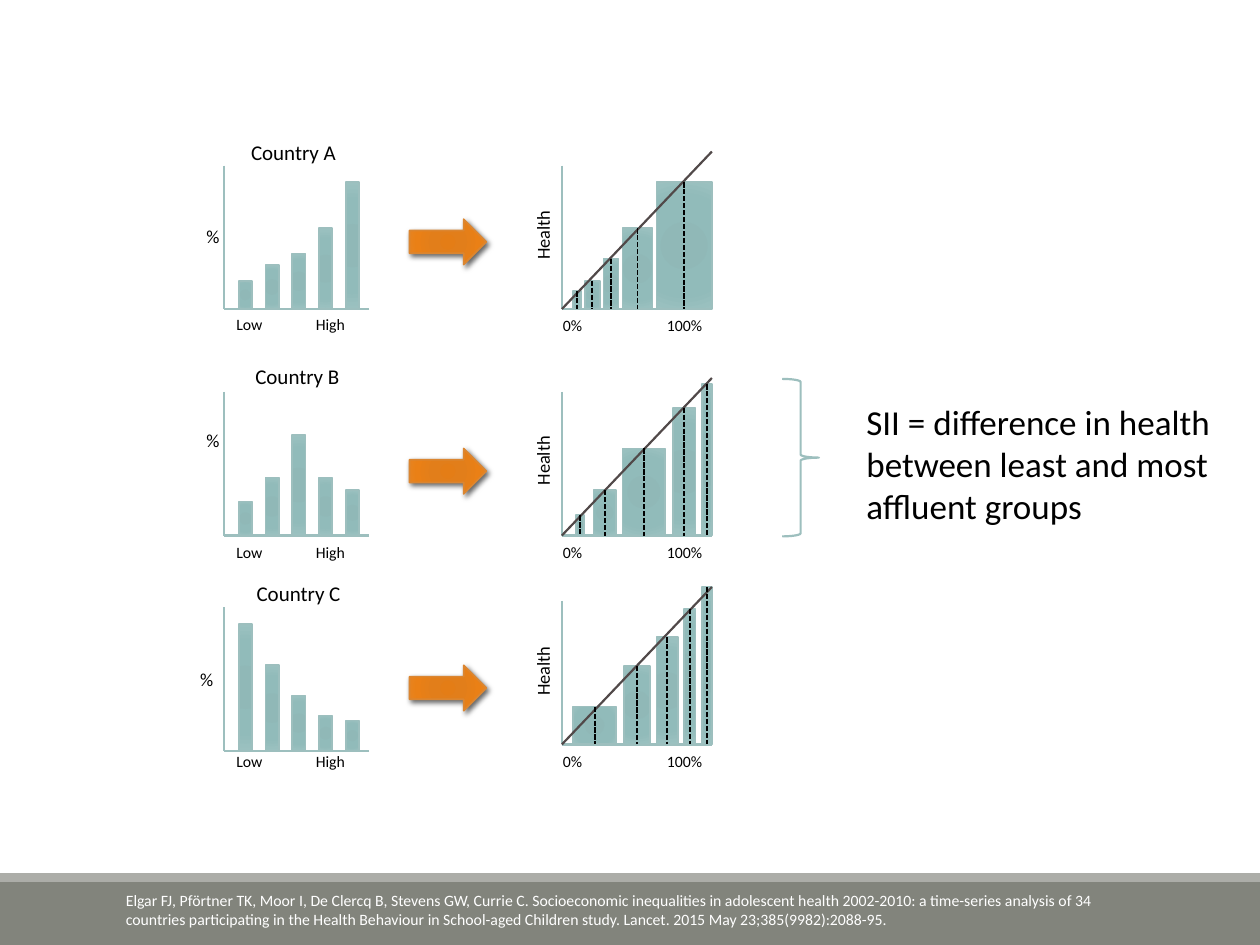
"""Build a slide on the slope index of inequality in three countries."""
from dataclasses import dataclass

from lxml import etree
from pptx import Presentation
from pptx import util as u
from pptx.dml.color import RGBColor
from pptx.enum import dml, shapes, text
from pptx.oxml import ns


@dataclass(frozen=True)
class Theme:
    """Colours, type sizes and line widths of the slide."""
    font: str = "Calibri"
    ink: str = "000000"
    paper: str = "FFFFFF"
    band: str = "82847C"
    strip: str = "ACADA8"
    teal: str = "9DBFBE"
    trend: str = "514949"
    arrow: str = "DB8631"
    bar_stops: tuple = ((0, "8EB7B6"), (34, "90B8B7"), (70, "91BBBA"), (100, "9BC1C0"))
    arrow_stops: tuple = ((0, "E47D16"), (34, "E27E1A"), (70, "EA8016"), (100, "E48628"))
    statement: float = 20
    title: float = 12
    label: float = 10.5
    small: float = 9
    thin: float = 1
    thick: float = 1.25


@dataclass(frozen=True)
class Country:
    """Positions and bars of one row; ranks hold left, width and height."""
    name: str
    title_at: tuple
    percent_at: tuple
    base: float
    shares: tuple
    rank_base: float
    ranks: tuple
    health_top: float
    low_top: float
    rank_label_top: float
    arrow_top: float


T = Theme()
COUNTRIES = (
    Country("Country A", (129.6, 76.3), (110.9, 125.3), 176.6,
            (16.2, 25.2, 31.7, 46.1, 72.4), 176.6,
            ((327.6, 4.3, 10.1), (334.1, 8.6, 16.2), (344.9, 8.6, 28.8),
             (355.7, 17.3, 46.1), (375.1, 31.7, 72.4)),
            119.5, 176.4, 177.1, 125.3),
    Country("Country B", (131.8, 204.5), (110.9, 241.9), 306,
            (19.4, 33.1, 57.6, 33.1, 25.9), 306,
            ((329, 5, 11.5), (339.1, 13, 25.9), (355.7, 24.5, 49.7),
             (384.5, 13, 73), (401, 5.8, 86.4)),
            248.4, 306.7, 306.7, 256.3),
    Country("Country C", (132.5, 328.3), (107.3, 378), 429.1,
            (72.7, 49, 31.7, 20.2, 17.3), 425.4,
            ((327.6, 24.5, 21.6), (356.4, 15.1, 45), (375.1, 12.2, 61.2),
             (391, 6.5, 77.4), (401, 5.8, 90)),
            368.6, 426.2, 426.2, 380.2),
)
AXIS_HEIGHT = 82
TREND_RISE = 90
SHARE_LEFT, SHARE_RIGHT = 128, 211
BAR_LEFT, BAR_PITCH, BAR_WIDTH = 136.4, 15.3, 7.6
RANK_LEFT, RANK_RIGHT = 321.1, 406.8


def add_element(parent, tag, **attrs):
    """Append a DrawingML element."""
    return etree.SubElement(parent, ns.qn(tag), attrs)


def add_color(parent, color):
    """Append a plain colour element."""
    return add_element(parent, "a:srgbClr", val=color)


def set_gradient(sp, stops):
    """Fill a shape with a radial gradient."""
    sp.fill.background()
    old = sp._element.spPr.find(ns.qn("a:noFill"))
    grad = etree.Element(ns.qn("a:gradFill"), rotWithShape="1")
    stop_list = add_element(grad, "a:gsLst")
    for position, color in stops:
        add_color(add_element(stop_list, "a:gs", pos=str(position * 1000)), color)
    radial = add_element(grad, "a:path", path="circle")
    add_element(radial, "a:fillToRect", **dict.fromkeys("ltrb", "100000"))
    old.getparent().replace(old, grad)


def add_figure(parent, kind, box, line=None, width=T.thin, fill=None, stops=None):
    """Add a preset shape with a solid, gradient or empty fill."""
    sp = parent.add_shape(kind, *map(u.Pt, box))
    sp.shadow.inherit = False
    if stops:
        set_gradient(sp, stops)
    elif fill:
        sp.fill.solid()
        sp.fill.fore_color.rgb = RGBColor.from_string(fill)
    else:
        sp.fill.background()
    if line:
        sp.line.color.rgb = RGBColor.from_string(line)
        sp.line.width = u.Pt(width)
    else:
        sp.line.fill.background()
    return sp


def add_bar(parent, left, base, width, height):
    """Add a bar standing on its baseline."""
    box = (left, base - height, width, height)
    add_figure(parent, shapes.MSO_SHAPE.RECTANGLE, box, T.teal, stops=T.bar_stops)


def add_line(parent, start, end, color=T.teal, width=T.thick, dashed=False):
    """Add a straight line."""
    sp = parent.add_connector(shapes.MSO_CONNECTOR.STRAIGHT, *map(u.Pt, start + end))
    sp.line.color.rgb = RGBColor.from_string(color)
    sp.line.width = u.Pt(width)
    if dashed:
        sp.line.dash_style = dml.MSO_LINE.SQUARE_DOT
        sp.line._ln.find(ns.qn("a:prstDash")).set("val", "sysDash")
    add_element(sp._element.spPr, "a:effectLst")


def add_text(parent, words, box, size, color=T.ink, align=None, wrap=True, tab=None, vert=None):
    """Add a text box of one paragraph."""
    tf = parent.add_textbox(*map(u.Pt, box)).text_frame
    tf.word_wrap = wrap
    tf.auto_size = text.MSO_AUTO_SIZE.SHAPE_TO_FIT_TEXT
    if vert:
        tf._txBody.bodyPr.set("vert", vert)
    p = tf.paragraphs[0]
    p.text = words
    if tab:
        tabs = add_element(p._p.get_or_add_pPr(), "a:tabLst")
        add_element(tabs, "a:tab", pos=str(u.Pt(tab)), algn="l")
    p.alignment = align
    for r in p.runs:
        r.font.name = T.font
        r.font.size = u.Pt(size)
        r.font.color.rgb = RGBColor.from_string(color)


def add_axes(parent, left, right, base):
    """Add a vertical and a horizontal axis."""
    add_line(parent, (left, base - AXIS_HEIGHT), (left, base))
    add_line(parent, (right, base), (left, base))


def add_share_chart(parent, c):
    """Add the diagram of population shares by affluence."""
    add_axes(parent, SHARE_LEFT, SHARE_RIGHT, c.base)
    for i, height in enumerate(c.shares):
        add_bar(parent, BAR_LEFT + i * BAR_PITCH, c.base, BAR_WIDTH, height)
    add_text(parent, c.name, (*c.title_at, 76.3, 21.6), T.title, align=text.PP_ALIGN.CENTER)
    add_text(parent, "%", (*c.percent_at, 22.3, 20.2), T.label, wrap=False)
    add_text(parent, "Low\tHigh", (SHARE_LEFT, c.low_top, 83, 18), T.small, tab=45.4)


def add_rank_chart(parent, c):
    """Add the diagram of health by cumulative rank, with its slope."""
    add_axes(parent, RANK_LEFT, RANK_RIGHT, c.rank_base)
    for left, width, height in c.ranks:
        add_bar(parent, left, c.rank_base, width, height)
    add_line(parent, (RANK_LEFT, c.rank_base), (RANK_RIGHT, c.rank_base - TREND_RISE), T.trend)
    for left, width, height in c.ranks:
        middle = left + width / 2
        add_line(parent, (middle, c.rank_base - height), (middle, c.rank_base),
                 T.ink, T.thin, dashed=True)
    add_text(parent, "0%\t100%", (314.6, c.rank_label_top, 118.8, 18), T.small, tab=59.4)
    add_text(parent, "Health", (300.2, c.health_top, 27.4, 36), T.label, wrap=False, vert="vert270")


def add_arrow(parent, top):
    """Add a block arrow with a soft shadow."""
    sp = add_figure(parent, shapes.MSO_SHAPE.RIGHT_ARROW, (234, top, 43.9, 25.9),
                    T.arrow, stops=T.arrow_stops)
    effects = sp._element.spPr.find(ns.qn("a:effectLst"))
    shadow = add_element(effects, "a:outerShdw", blurRad=str(u.Pt(3)), dist=str(u.Pt(2)),
                         dir="2700000", algn="tl", rotWithShape="0")
    add_element(add_color(shadow, T.ink), "a:alpha", val="60000")


def add_footer(parent):
    """Add the footer bands and the citation."""
    for box, color in (((0, 504, 720, 36), T.band), ((0, 499, 720, 5), T.strip)):
        add_figure(parent, shapes.MSO_SHAPE.RECTANGLE, box, fill=color)
    add_text(parent, "Elgar FJ, Pförtner TK, Moor I, De Clercq B, Stevens GW, Currie C. "
             "Socioeconomic inequalities in adolescent health 2002-2010: a time-series analysis "
             "of 34 countries participating in the Health Behaviour in School-aged Children "
             "study. Lancet. 2015 May 23;385(9982):2088-95.",
             (64.8, 505.4, 566, 28.8), T.small, T.paper)


def main():
    """Build and save the slide."""
    prs = Presentation()
    prs.slide_width, prs.slide_height = u.Pt(720), u.Pt(540)
    s = prs.slides.add_slide(prs.slide_layouts[6])
    add_footer(s.shapes)
    share, rank, arrows, result = (s.shapes.add_group_shape().shapes for _ in range(4))
    for c in COUNTRIES:
        add_share_chart(share, c)
        add_rank_chart(rank, c)
        add_arrow(arrows, c.arrow_top)
    add_figure(result, shapes.MSO_SHAPE.RIGHT_BRACE, (447, 216.5, 21, 90), T.teal, T.thick)
    add_text(result, "SII = difference in health between least and most affluent groups",
             (488, 225.4, 213, 80), T.statement)
    prs.save("out.pptx")


if __name__ == "__main__":
    main()
